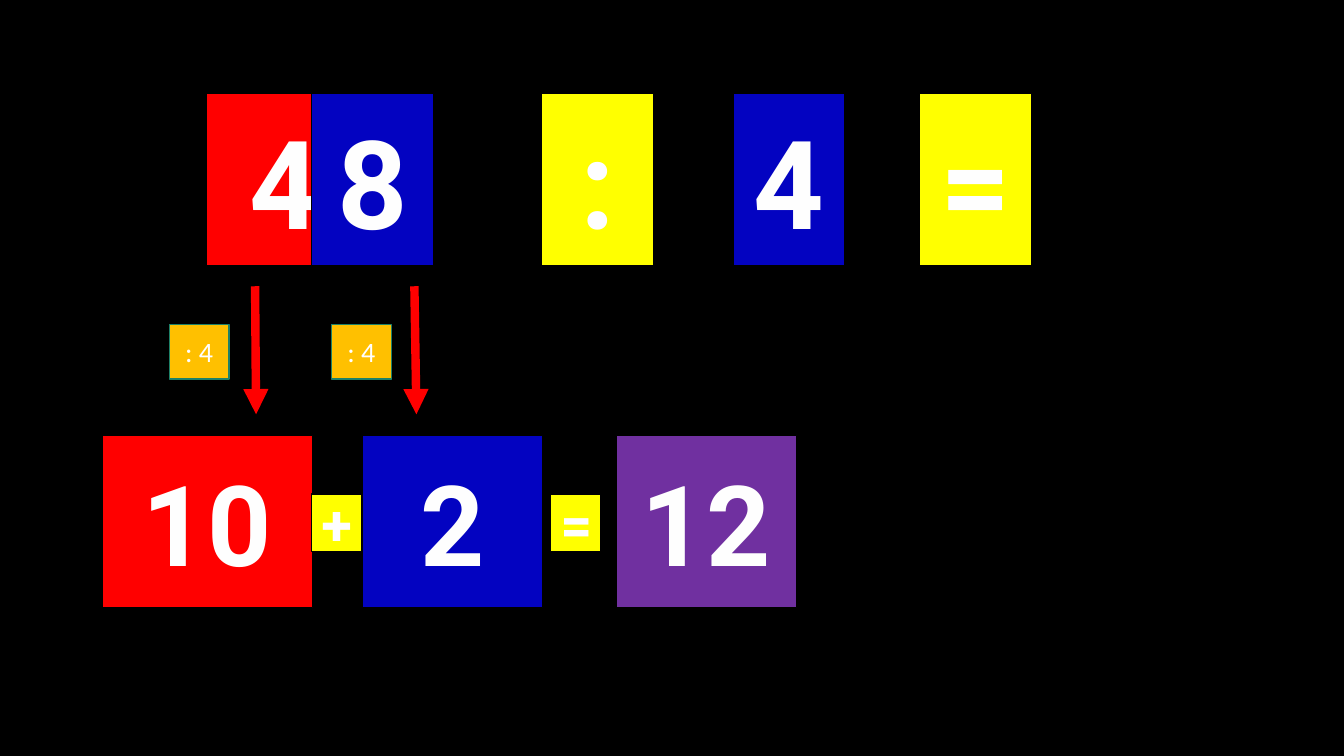
import lxml.etree
import pptx
import pptx.chart.data
import pptx.dml.color
import pptx.enum.shapes
import pptx.enum.text
import pptx.oxml.ns
import pptx.util

WIDTH, HEIGHT = 13.33, 7.5
BLACK, RED, BLUE, YELLOW = "000000", "FF0000", "0303C1", "FFFF00"
PURPLE, ORANGE, GREEN, TEAL = "7030A0", "FFC000", "1E8168", "29AF8C"

BIG = {"name": "Roboto", "size": 88, "bold": True}
RESULT = {**BIG, "size": 80}
SIGN = {**BIG, "size": 40}
STEP = {"name": "Calibri", "size": 20, "bold": False}

# Each row: top, height, line colour, font, then cards (text, left, width, fill)
ROWS = [
    (0.93, 1.71, BLACK, BIG, [
        ("40", 2.05, 2.25, RED), ("8", 3.09, 1.21, BLUE), (":", 5.37, 1.11, YELLOW),
        ("4", 7.27, 1.11, BLUE), ("=", 9.12, 1.11, YELLOW)]),
    (4.32, 1.71, BLACK, RESULT, [
        ("10", 1.01, 2.09, RED), ("2", 3.59, 1.79, BLUE), ("12", 6.11, 1.79, PURPLE)]),
    (3.22, 0.54, GREEN, STEP, [(": 4", 1.68, 0.59, ORANGE), (": 4", 3.29, 0.59, ORANGE)]),
    (4.9, 0.57, BLACK, SIGN, [("+", 3.09, 0.5, YELLOW), ("=", 5.46, 0.5, YELLOW)]),
]
ARROWS = [(2.53, 2.54), (4.11, 4.13)]
ARROW_TOP, ARROW_BOTTOM = 2.84, 4.11


def color(value):
    return pptx.dml.color.RGBColor.from_string(value)


def add_element(parent, tag, **attributes):
    return lxml.etree.SubElement(parent, pptx.oxml.ns.qn(tag), attributes)


def outline_text(span):
    """Give the letters a thin teal edge and wider letter spacing."""
    props = span.font._element if hasattr(span.font, "_element") else span._r.get_or_add_rPr()
    props.set("spc", "50")
    edge = add_element(props, "a:ln", w="9525")
    add_element(add_element(edge, "a:solidFill"), "a:srgbClr", val=TEAL)
    props.insert(0, edge)


def add_card(page, text, box, fill, line, font):
    card = page.shapes.add_shape(
        pptx.enum.shapes.MSO_SHAPE.RECTANGLE, *map(pptx.util.Inches, box))
    card.shadow.inherit = False
    card.fill.solid()
    card.fill.fore_color.rgb = color(fill)
    card.line.color.rgb = color(line)
    card.line.width = pptx.util.Pt(1)
    card.text_frame.word_wrap = True
    card.text_frame.vertical_anchor = pptx.enum.text.MSO_ANCHOR.MIDDLE
    para = card.text_frame.paragraphs[0]
    para.alignment = pptx.enum.text.PP_ALIGN.CENTER
    span = para.add_run()
    span.text = text
    for key, value in {**font, "size": pptx.util.Pt(font["size"])}.items():
        setattr(span.font, key, value)
    span.font.color.rgb = color("FEFEFE" if font["bold"] else "FFFFFF")
    if font["bold"]:
        outline_text(span)


def add_arrow(page, start, end):
    arrow = page.shapes.add_connector(
        pptx.enum.shapes.MSO_CONNECTOR.STRAIGHT,
        *map(pptx.util.Inches, (start, ARROW_TOP, end, ARROW_BOTTOM)))
    arrow.line.color.rgb = color(RED)
    arrow.line.width = pptx.util.Pt(6)
    add_element(arrow.line._get_or_add_ln(), "a:tailEnd", type="triangle")
    add_element(arrow._element.spPr, "a:effectLst")


def main():
    deck = pptx.Presentation()
    deck.slide_width = pptx.util.Inches(WIDTH)
    deck.slide_height = pptx.util.Inches(HEIGHT)
    page = deck.slides.add_slide(deck.slide_layouts[6])
    page.background.fill.solid()
    page.background.fill.fore_color.rgb = color(BLACK)
    for top, height, line, font, cards in ROWS:
        for text, left, width, fill in cards:
            add_card(page, text, (left, top, width, height), fill, line, font)
    for start, end in ARROWS:
        add_arrow(page, start, end)
    deck.save("out.pptx")


if __name__ == "__main__":
    main()
